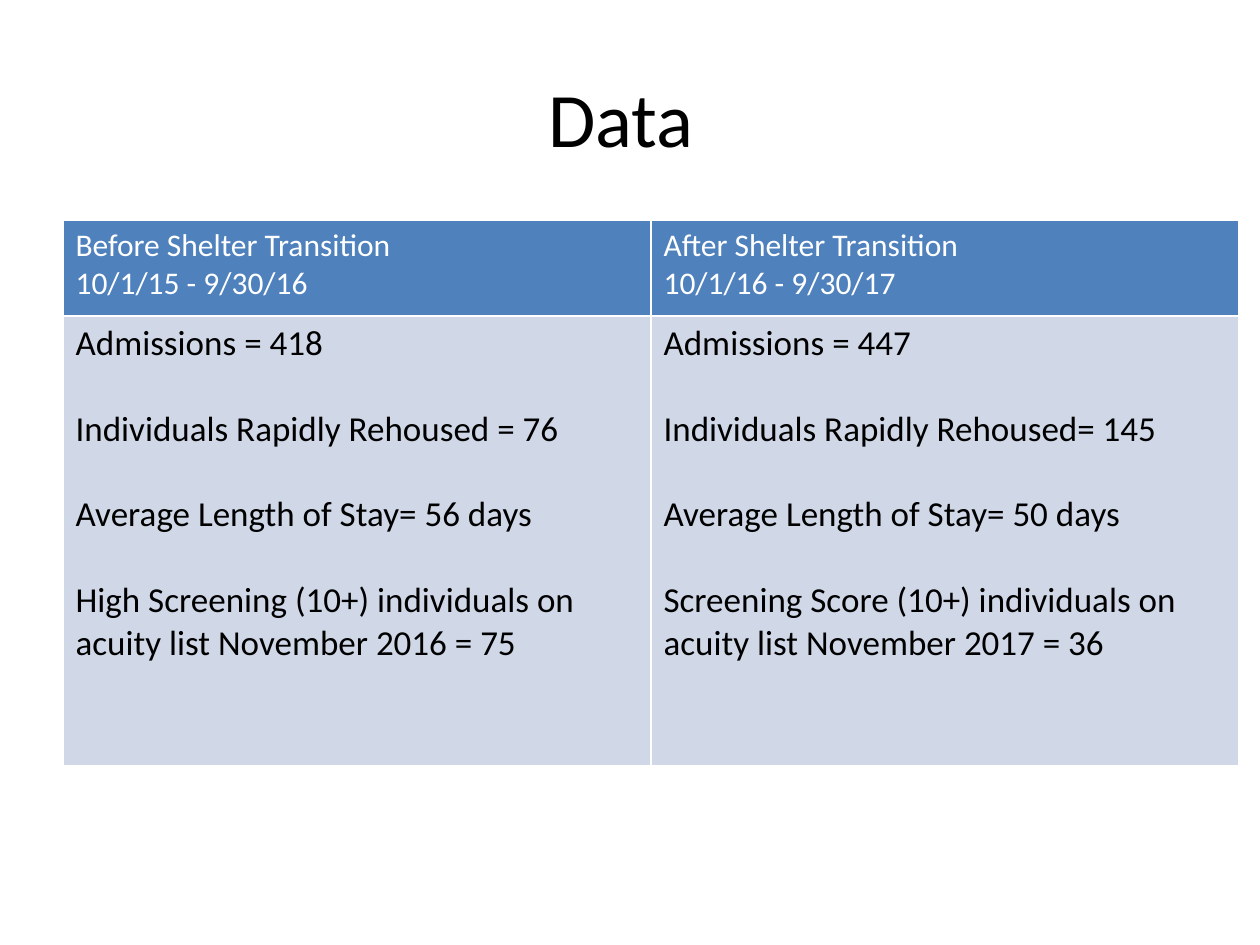
from dataclasses import dataclass

from pptx import Presentation
from pptx.dml.color import RGBColor
from pptx.enum.text import MSO_ANCHOR, PP_ALIGN
from pptx.util import Pt

PX = 914400 / 126
FONT = "Calibri"
BLACK = RGBColor(0x00, 0x00, 0x00)
WHITE = RGBColor(0xFF, 0xFF, 0xFF)
BLUE = RGBColor(0x4F, 0x81, 0xBD)
PALE = RGBColor(0xD0, 0xD8, 0xE8)


@dataclass
class Style:
    size: int
    color: RGBColor
    gap: float = 0
    fill: RGBColor | None = None
    align: PP_ALIGN = PP_ALIGN.LEFT


@dataclass
class Period:
    head: list[str]
    facts: list[str]


TITLE = Style(44, BLACK, align=PP_ALIGN.CENTER)
HEAD = Style(18, WHITE, fill=BLUE)
BODY = Style(20, BLACK, gap=24.4, fill=PALE)

PERIODS = [
    Period(
        ["Before Shelter Transition", "10/1/15 - 9/30/16"],
        [
            "Admissions = 418",
            "Individuals Rapidly Rehoused = 76",
            "Average Length of Stay= 56 days",
            "High Screening (10+) individuals on acuity list November 2016 = 75",
        ],
    ),
    Period(
        ["After Shelter Transition", "10/1/16 - 9/30/17"],
        [
            "Admissions = 447",
            "Individuals Rapidly Rehoused= 145",
            "Average Length of Stay= 50 days",
            "Screening Score (10+) individuals on acuity list November 2017 = 36",
        ],
    ),
]


def px(n: int) -> int:
    return round(n * PX)


def write(frame, lines: list[str], style: Style) -> None:
    frame.text = "\n".join(lines)
    for i, para in enumerate(frame.paragraphs):
        para.alignment = style.align
        if i and style.gap:
            para.space_before = Pt(style.gap)
        for run in para.runs:
            font = run.font
            font.name, font.size, font.bold = FONT, Pt(style.size), False
            font.color.rgb = style.color


def fill_cell(cell, lines: list[str], style: Style) -> None:
    cell.fill.solid()
    cell.fill.fore_color.rgb = style.fill
    write(cell.text_frame, lines, style)


def main() -> None:
    prs = Presentation()
    prs.slide_width, prs.slide_height = px(1260), px(945)
    slide = prs.slides.add_slide(prs.slide_layouts[5])

    # Title, set slightly left of centre
    title = slide.shapes.title
    title.left, title.top = px(54), px(38)
    title.width, title.height = px(1134), px(158)
    title.text_frame.vertical_anchor = MSO_ANCHOR.MIDDLE
    write(title.text_frame, ["Data"], TITLE)

    # Comparison table: one column per period
    heights = [96, 450]
    wide = 588
    table = slide.shapes.add_table(
        len(heights), len(PERIODS), px(63), px(220),
        px(wide * len(PERIODS)), px(sum(heights)),
    ).table
    for row, high in zip(table.rows, heights):
        row.height = px(high)
    for i, period in enumerate(PERIODS):
        table.columns[i].width = px(wide)
        fill_cell(table.cell(0, i), period.head, HEAD)
        fill_cell(table.cell(1, i), period.facts, BODY)

    prs.save("out.pptx")


if __name__ == "__main__":
    main()
